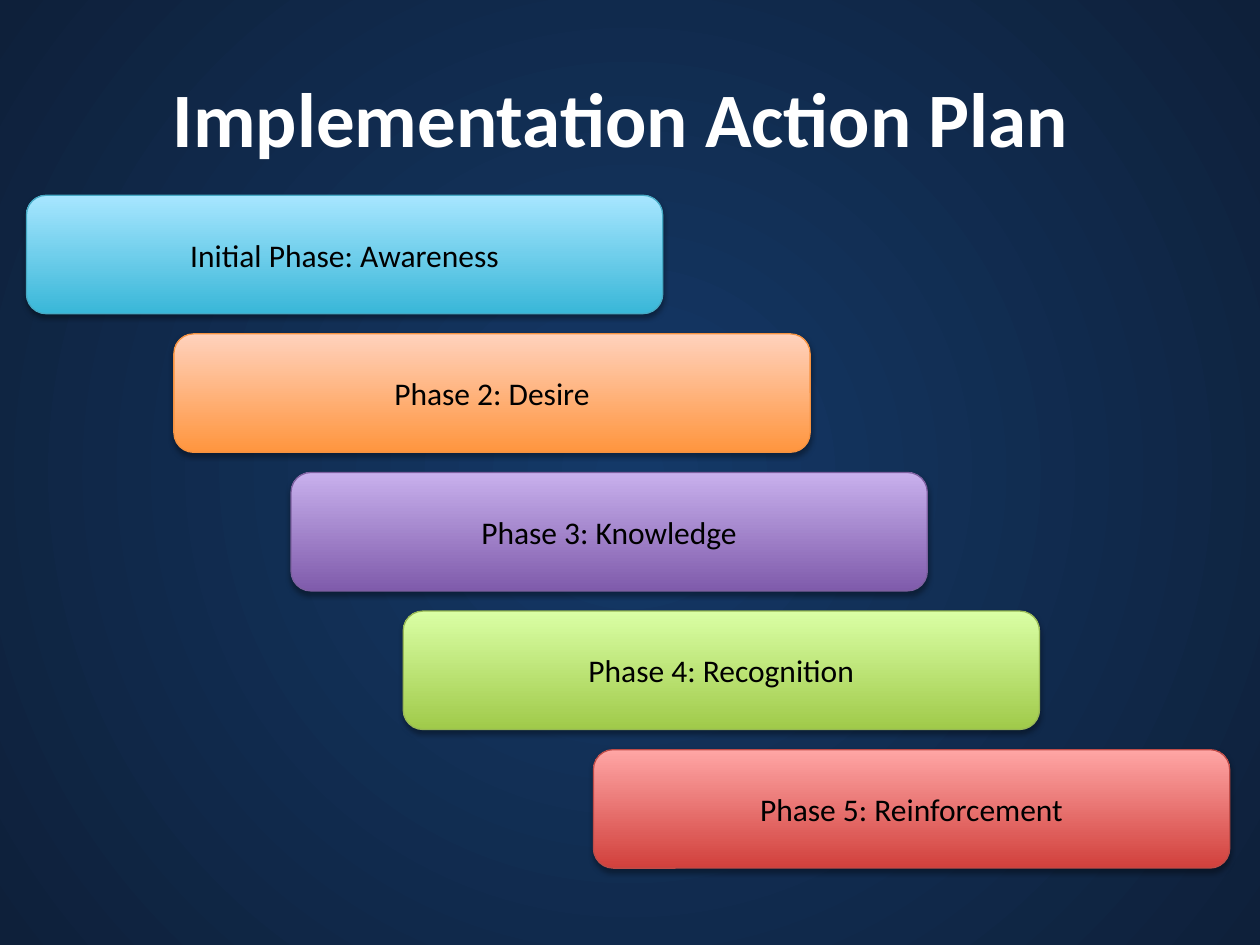
from lxml.etree import SubElement
from pptx import Presentation
from pptx.dml.color import RGBColor
from pptx.enum.shapes import MSO_SHAPE
from pptx.enum.text import MSO_ANCHOR, PP_ALIGN
from pptx.oxml.ns import qn
from pptx.util import Inches, Pt

# Content: label, left edge, bottom colour, top colour, outline
TITLE = "Implementation Action Plan "
PHASES = [
    ("Initial Phase: Awareness", 0.21, "39B7D8", "A7E6FF", "46AAC5"),
    ("Phase 2: Desire", 1.38, "FF953E", "FFD2BD", "F69240"),
    ("Phase 3: Knowledge", 2.31, "7F5BAB", "C8B0ED", "7D60A0"),
    ("Phase 4: Recognition", 3.2, "A0CA4A", "DAFFA5", "98B955"),
    ("Phase 5: Reinforcement", 4.71, "D1403C", "FFA6A5", "BF4C48"),
]

THEME = {
    "font": "Calibri", "title_size": 44, "phase_size": 18,
    "title": "FFFFFF", "phase": "000000", "shadow": "000000",
    "background": ("143968", "0E203A"),
}
FIRST_TOP, STEP = 1.55, 1.1
BAR_WIDTH, BAR_HEIGHT = 5.05, 0.94


def write(frame, text, size, color, bold=False):
    frame.word_wrap = True
    frame.vertical_anchor = MSO_ANCHOR.MIDDLE
    paragraph = frame.paragraphs[0]
    paragraph.alignment = PP_ALIGN.CENTER
    run = paragraph.add_run()
    run.text = text
    run.font.name = THEME["font"]
    run.font.size = Pt(size)
    run.font.bold = bold
    run.font.color.rgb = RGBColor.from_string(color)


def set_gradient(fill, colors):
    fill.gradient()
    for stop, color, position in zip(fill.gradient_stops, colors, (0, 1)):
        stop.color.rgb = RGBColor.from_string(color)
        stop.position = position


def add_soft_shadow(bar):
    bar.shadow.inherit = False
    effects = bar.element.spPr.find(qn("a:effectLst"))
    shadow = SubElement(effects, qn("a:outerShdw"), blurRad=str(Pt(3.1)),
                        dist=str(Pt(1.8)), dir="5400000", rotWithShape="0")
    color = SubElement(shadow, qn("a:srgbClr"), val=THEME["shadow"])
    SubElement(color, qn("a:alpha"), val="35000")


def set_radial_background(slide):
    set_gradient(slide.background.fill, THEME["background"])
    linear = slide.element.find(".//" + qn("a:lin"))
    gradient = linear.getparent()
    gradient.remove(linear)
    circle = SubElement(gradient, qn("a:path"), path="circle")
    SubElement(circle, qn("a:fillToRect"), l="50000", t="50000", r="50000", b="50000")


def main():
    deck = Presentation()
    deck.slide_width, deck.slide_height = Inches(10), Inches(7.5)
    slide = deck.slides.add_slide(deck.slide_layouts[5])
    set_radial_background(slide)

    # Title
    title = slide.shapes.title
    title.left, title.top = Inches(0.5), Inches(0.3)
    title.width, title.height = Inches(9), Inches(1.25)
    write(title.text_frame, TITLE, THEME["title_size"], THEME["title"], bold=True)

    # Staircase of phases
    for index, (label, left, bottom_color, top_color, outline) in enumerate(PHASES):
        bar = slide.shapes.add_shape(
            MSO_SHAPE.ROUNDED_RECTANGLE, Inches(left),
            Inches(FIRST_TOP + index * STEP), Inches(BAR_WIDTH), Inches(BAR_HEIGHT))
        set_gradient(bar.fill, (bottom_color, top_color))
        bar.fill.gradient_angle = 90
        bar.line.color.rgb = RGBColor.from_string(outline)
        bar.line.width = Pt(0.75)
        add_soft_shadow(bar)
        write(bar.text_frame, label, THEME["phase_size"], THEME["phase"])

    deck.save("out.pptx")


if __name__ == "__main__":
    main()
